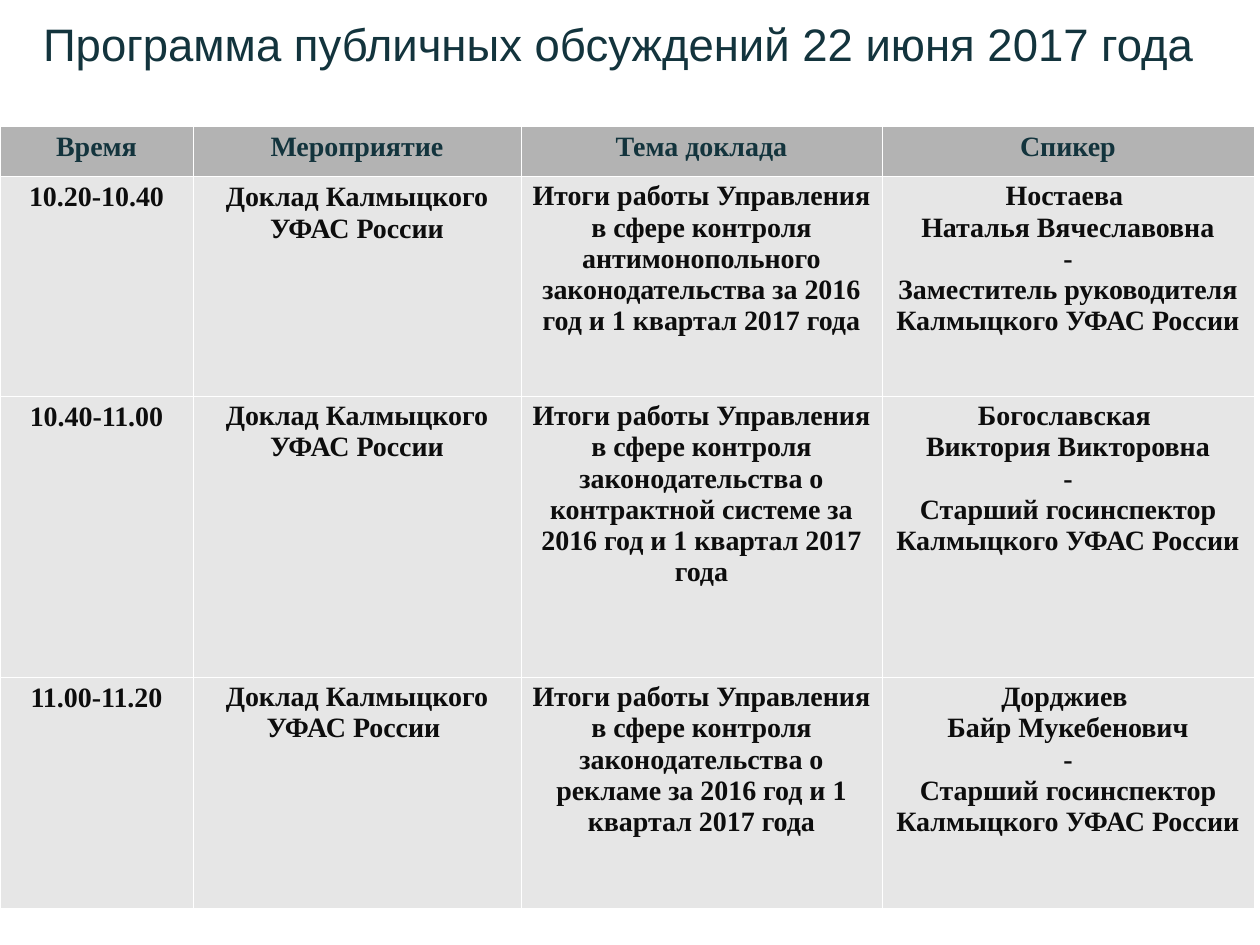
from lxml.etree import SubElement
from pptx import Presentation
from pptx.dml.color import RGBColor
from pptx.enum.text import MSO_ANCHOR, MSO_AUTO_SIZE, PP_ALIGN
from pptx.oxml.ns import qn
from pptx.util import Pt

PIXEL = 914400 / 126
TITLE_COLOR = RGBColor(0x13, 0x34, 0x3D)
BODY_COLOR = RGBColor(0x0D, 0x0D, 0x0D)
HEADER_FILL = RGBColor(0xB3, 0xB3, 0xB3)
BODY_FILL = RGBColor(0xE6, 0xE6, 0xE6)
BORDER_COLOR = RGBColor(0xFF, 0xFF, 0xFF)

COLUMN_WIDTHS = (193, 328, 361, 372)
ROW_HEIGHTS = (50, 220, 281, 231)
WIDE_MARGINS = (13, 6)
NARROW_MARGINS = (5, 5)

REPORT = "Доклад Калмыцкого УФАС России"
TOPIC = "Итоги работы Управления в сфере контроля {} 2016 год и 1 квартал 2017 года"
INSPECTOR = "Старший госинспектор Калмыцкого УФАС России"
PROGRAM = (
    ("Время", "Мероприятие", "Тема доклада", "Спикер"),
    ("10.20-10.40", REPORT,
     TOPIC.format("антимонопольного законодательства за"),
     "Ностаева \nНаталья Вячеславовна\n-\n"
     "Заместитель руководителя Калмыцкого УФАС России"),
    ("10.40-11.00", REPORT,
     TOPIC.format("законодательства о контрактной системе за"),
     "Богославская \nВиктория Викторовна\n-\n" + INSPECTOR),
    ("11.00-11.20", REPORT + " ",
     TOPIC.format("законодательства о рекламе за"),
     "Дорджиев \nБайр Мукебенович\n-\n" + INSPECTOR),
)


def px(length):
    return round(length * PIXEL)


def set_margins(target, horizontal, vertical):
    target.margin_left = target.margin_right = px(horizontal)
    target.margin_top = target.margin_bottom = px(vertical)


def format_text(text_frame, font_name, size, color, bold, alignment):
    for paragraph in text_frame.paragraphs:
        paragraph.alignment = alignment
        for run in paragraph.runs:
            run.font.name = font_name
            run.font.size = Pt(size)
            run.font.bold = bold
            run.font.color.rgb = color


def add_borders(cell):
    properties = cell._tc.get_or_add_tcPr()
    for side in ("lnL", "lnR", "lnT", "lnB"):
        line = SubElement(properties, qn(f"a:{side}"), w=str(Pt(0.06)))
        fill = SubElement(line, qn("a:solidFill"))
        SubElement(fill, qn("a:srgbClr"), val=str(BORDER_COLOR))


def fill_title(slide, left, top, width, height):
    title = slide.shapes.title
    title.left, title.top, title.width, title.height = map(px, (left, top, width, height))
    text_frame = title.text_frame
    text_frame.text = "Программа публичных обсуждений 22 июня 2017 года"
    text_frame.word_wrap = True
    text_frame.auto_size = MSO_AUTO_SIZE.NONE
    text_frame.vertical_anchor = MSO_ANCHOR.TOP
    set_margins(text_frame, *WIDE_MARGINS)
    format_text(text_frame, "Arial", 26, TITLE_COLOR, False, PP_ALIGN.LEFT)


def fill_cell(cell, text, is_header, margins):
    cell.text_frame.text = text
    cell.vertical_anchor = MSO_ANCHOR.TOP
    set_margins(cell, *margins)
    color = TITLE_COLOR if is_header else BODY_COLOR
    format_text(cell.text_frame, "Times New Roman", 16, color, True, PP_ALIGN.CENTER)
    add_borders(cell)
    cell.fill.solid()
    cell.fill.fore_color.rgb = HEADER_FILL if is_header else BODY_FILL


def add_program_table(slide, left, top):
    table = slide.shapes.add_table(
        len(ROW_HEIGHTS), len(COLUMN_WIDTHS), px(left), px(top),
        px(sum(COLUMN_WIDTHS)), px(sum(ROW_HEIGHTS))).table
    table.horz_banding = False
    for column, width in zip(table.columns, COLUMN_WIDTHS):
        column.width = px(width)
    for row_index, (row, height) in enumerate(zip(table.rows, ROW_HEIGHTS)):
        row.height = px(height)
        for column_index, cell in enumerate(row.cells):
            is_wide = row_index == 0 or column_index == 0 or row_index == column_index == 1
            fill_cell(cell, PROGRAM[row_index][column_index], row_index == 0,
                      WIDE_MARGINS if is_wide else NARROW_MARGINS)


def main():
    presentation = Presentation()
    presentation.slide_width = px(1260)
    presentation.slide_height = px(945)
    slide = presentation.slides.add_slide(presentation.slide_layouts[5])
    fill_title(slide, 30, 10, 1220, 100)
    add_program_table(slide, 0, 126)
    presentation.save("out.pptx")


if __name__ == "__main__":
    main()
